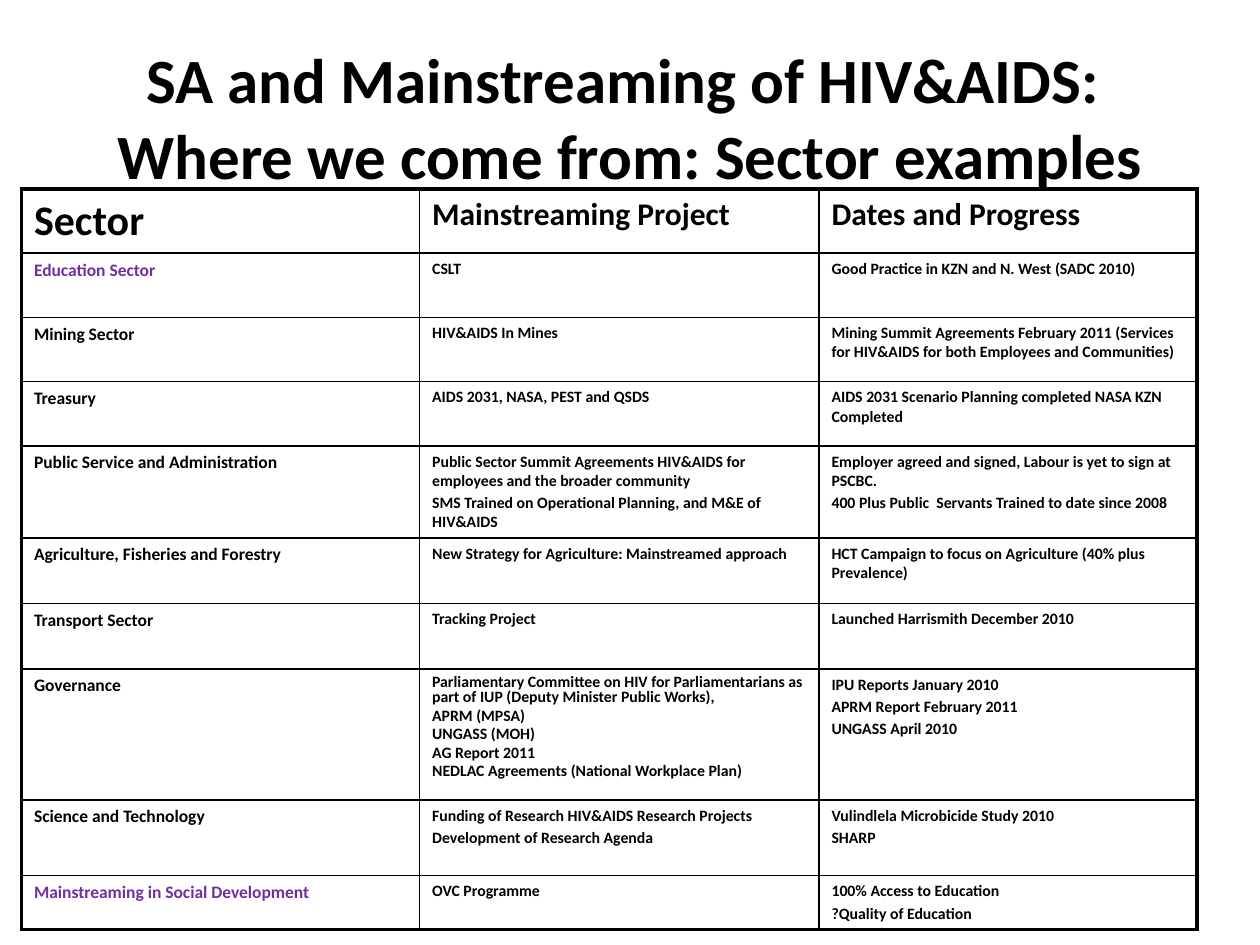
import pptx
import pptx.dml.color
import pptx.enum.text
import pptx.oxml
import pptx.oxml.ns
import pptx.util
from pptx.util import Inches

COLORS = {"text": "000000", "highlight": "7030A0", "border": "000000", "background": "FFFFFF"}
FONT = "Calibri"
THIN, THICK = 1, 2.25

TITLE = "SA and Mainstreaming of HIV&AIDS: \vWhere we come from: Sector examples"
HEADER_SIZES = (24, 18, 18)
BODY_SIZES = (10, 9, 9)
COLUMN_WIDTHS = (3.16, 3.17, 3)
ROW_HEIGHTS = (0.51, 0.51, 0.51, 0.51, 0.73, 0.52, 0.52, 1.04, 0.6, 0.43)
HIGHLIGHTED_SECTORS = ("Education Sector", "Mainstreaming in Social Development")
TIGHT_SECTOR = "Governance"

# Each row: sector, project, progress; a line break starts a new paragraph
ROWS = [
    ("Sector", "Mainstreaming Project", "Dates and Progress"),
    ("Education Sector", "CSLT", "Good Practice in KZN and N. West (SADC 2010)"),
    ("Mining Sector", "HIV&AIDS In Mines",
     "Mining Summit Agreements February 2011 (Services for HIV&AIDS for both "
     "Employees and Communities)"),
    ("Treasury", "AIDS 2031, NASA, PEST and QSDS",
     "AIDS 2031 Scenario Planning completed NASA KZN Completed"),
    ("Public Service and Administration",
     "Public Sector Summit Agreements HIV&AIDS for employees and the broader community\n"
     "SMS Trained on Operational Planning, and M&E of HIV&AIDS",
     "Employer agreed and signed, Labour is yet to sign at PSCBC.\n"
     "400 Plus Public  Servants Trained to date since 2008"),
    ("Agriculture, Fisheries and Forestry",
     "New Strategy for Agriculture: Mainstreamed approach",
     "HCT Campaign to focus on Agriculture (40% plus Prevalence)"),
    ("Transport Sector", "Tracking Project", "Launched Harrismith December 2010"),
    ("Governance",
     "Parliamentary Committee on HIV for Parliamentarians as part of IUP "
     "(Deputy Minister Public Works),\n"
     "APRM (MPSA)\nUNGASS (MOH)\nAG Report 2011\n"
     "NEDLAC Agreements (National Workplace Plan)",
     "IPU Reports January 2010\nAPRM Report February 2011\nUNGASS April 2010"),
    ("Science and Technology",
     "Funding of Research HIV&AIDS Research Projects\nDevelopment of Research Agenda",
     "Vulindlela Microbicide Study 2010\nSHARP"),
    ("Mainstreaming in Social Development", "OVC Programme",
     "100% Access to Education\n?Quality of Education"),
]


def format_runs(paragraph, size, color):
    for run in paragraph.runs:
        run.font.name = FONT
        run.font.size = pptx.util.Pt(size)
        run.font.bold = True
        run.font.color.rgb = pptx.dml.color.RGBColor.from_string(COLORS[color])


def set_borders(cell, widths):
    """Draw the cell edges; widths maps l, r, t, b to points, in schema order."""
    properties = cell._tc.get_or_add_tcPr()
    for position, (side, width) in enumerate(widths.items()):
        line = pptx.oxml.parse_xml(
            f'<a:ln{side.upper()} {pptx.oxml.ns.nsdecls("a")} w="{pptx.util.Pt(width)}">'
            f'<a:solidFill><a:srgbClr val="{COLORS["border"]}"/></a:solidFill>'
            f'</a:ln{side.upper()}>')
        properties.insert(position, line)


def add_title(slide, left, top, width, height):
    shape = slide.shapes.add_textbox(left, top, width, height)
    text_frame = shape.text_frame
    text_frame.word_wrap = True
    text_frame.vertical_anchor = pptx.enum.text.MSO_ANCHOR.MIDDLE
    text_frame.text = TITLE
    paragraph = text_frame.paragraphs[0]
    paragraph.alignment = pptx.enum.text.PP_ALIGN.CENTER
    format_runs(paragraph, 36, "text")


def fill_cell(cell, text, size, color, line_spacing):
    cell.fill.background()
    cell.text_frame.text = text
    for paragraph in cell.text_frame.paragraphs:
        paragraph.space_before = pptx.util.Pt(size * 0.2)
        if line_spacing:
            paragraph.line_spacing = line_spacing
        format_runs(paragraph, size, color)


def add_sector_table(slide, left, top, width, height):
    last_row, last_column = len(ROWS) - 1, len(COLUMN_WIDTHS) - 1
    table = slide.shapes.add_table(len(ROWS), len(COLUMN_WIDTHS), left, top, width, height).table
    table.horz_banding = False
    for column, column_width in zip(table.columns, COLUMN_WIDTHS):
        column.width = Inches(column_width)
    for row, row_height in zip(table.rows, ROW_HEIGHTS):
        row.height = Inches(row_height)

    for r, texts in enumerate(ROWS):
        sizes = HEADER_SIZES if r == 0 else BODY_SIZES
        for c, (text, size) in enumerate(zip(texts, sizes)):
            cell = table.cell(r, c)
            color = "highlight" if text in HIGHLIGHTED_SECTORS else "text"
            tight = texts[0] == TIGHT_SECTOR and c == 1
            fill_cell(cell, text, size, color, 0.8 if tight else None)
            # Thick outer frame, thin inner grid
            set_borders(cell, {
                "l": THICK if c == 0 else THIN,
                "r": THICK if c == last_column else THIN,
                "t": THICK if r == 0 else THIN,
                "b": THICK if r == last_row else THIN,
            })


def main():
    presentation = pptx.Presentation()
    presentation.slide_width = Inches(10)
    presentation.slide_height = Inches(7.5)
    slide = presentation.slides.add_slide(presentation.slide_layouts[6])
    background = slide.background.fill
    background.solid()
    background.fore_color.rgb = pptx.dml.color.RGBColor.from_string(COLORS["background"])

    add_title(slide, Inches(0.5), Inches(0.3), Inches(9), Inches(1.25))
    add_sector_table(slide, Inches(0.17), Inches(1.5),
                     Inches(sum(COLUMN_WIDTHS)), Inches(sum(ROW_HEIGHTS)))
    presentation.save("out.pptx")


if __name__ == "__main__":
    main()
